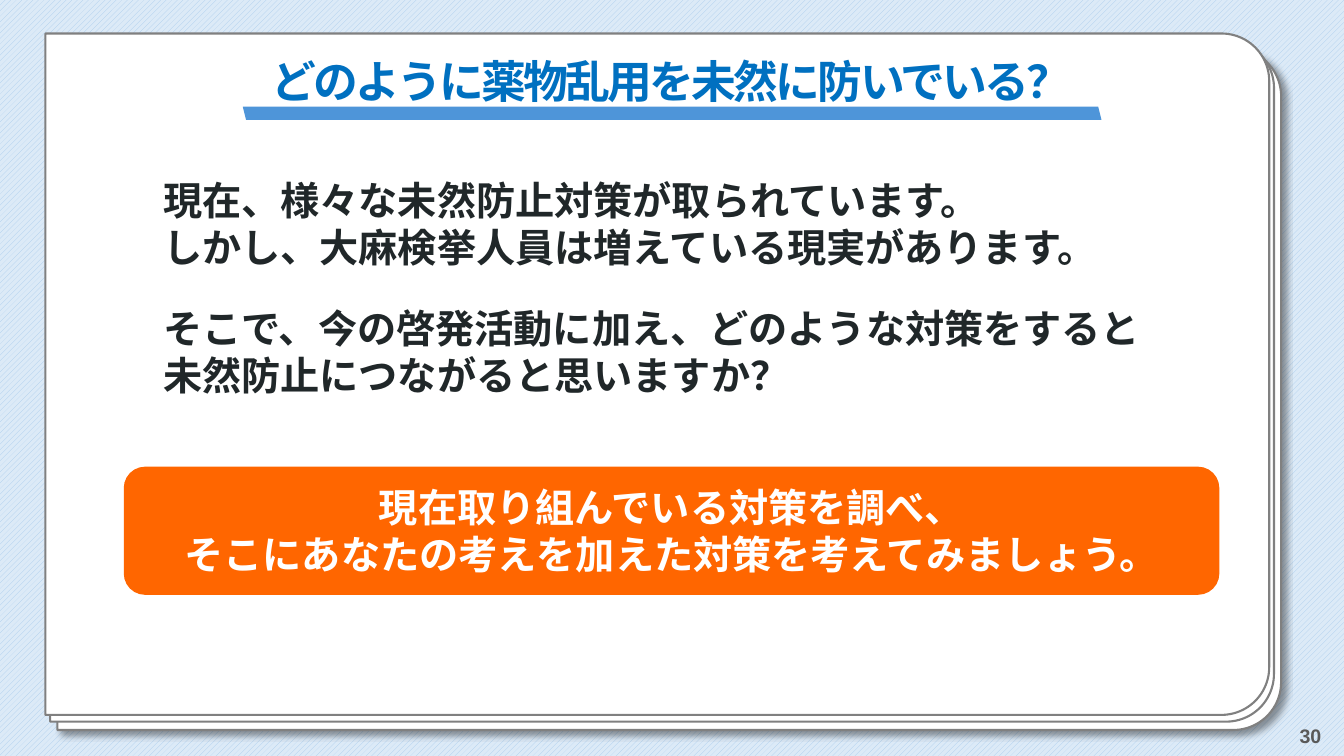
import pptx
import pptx.util
import pptx.dml.color
import pptx.enum.dml
import pptx.enum.shapes
import pptx.enum.text
import pptx.oxml
import pptx.oxml.ns

TITLE = "どのように薬物乱用を未然に防いでいる？"
BODY = [
    "現在、様々な未然防止対策が取られています。\vしかし、大麻検挙人員は増えている現実があります。",
    "そこで、今の啓発活動に加え、どのような対策をすると\v未然防止につながると思いますか？",
]
CALL = ["現在取り組んでいる対策を調べ、\vそこにあなたの考えを加えた対策を考えてみましょう。"]
PAGE = "30"
SHEETS = [(8.28, -5.61), (8.1, -5.82), (7.98, -5.99)]
COLORS = {
    "stripe": "A6CAEC", "ground": "DCEAF7", "white": "FFFFFF", "edge": "808080",
    "title": "0070C0", "page": "595959", "text": "202729", "call": "FF6600", "bar": "4E95D9",
}
SHADOW = (
    '<a:effectLst xmlns:a="http://schemas.openxmlformats.org/drawingml/2006/main">'
    '<a:outerShdw blurRad="50800" dist="63500" dir="2700000" algn="tl" rotWithShape="0">'
    '<a:srgbClr val="000000"><a:alpha val="40000"/></a:srgbClr></a:outerShdw></a:effectLst>'
)

Cm = pptx.util.Cm
Pt = pptx.util.Pt
SHAPE = pptx.enum.shapes.MSO_SHAPE
ALIGN = pptx.enum.text.PP_ALIGN
ANCHOR = pptx.enum.text.MSO_ANCHOR


def rgb(name):
    return pptx.dml.color.RGBColor.from_string(COLORS[name])


def add_shape(kind, box, fill):
    sp = slide.shapes.add_shape(kind, *map(Cm, box))
    sp.shadow.inherit = False
    sp.fill.solid()
    sp.fill.fore_color.rgb = rgb(fill)
    sp.line.fill.background()
    return sp


def write(sp, lines, size, color, align, anchor, font="Arial", after=0):
    tf = sp.text_frame
    tf.word_wrap = True
    tf.vertical_anchor = anchor
    for i, line in enumerate(lines):
        p = tf.paragraphs[0] if i == 0 else tf.add_paragraph()
        p.text = line
        p.alignment = align
        p.space_after = Pt(after)
        for r in p.runs:
            r.font.name = font
            r.font.size = Pt(size)
            r.font.bold = True
            r.font.color.rgb = rgb(color)
            ea = r.font._element.makeelement(pptx.oxml.ns.qn("a:ea"), {"typeface": font})
            r.font._element.append(ea)
    return tf


prs = pptx.Presentation()
prs.slide_width, prs.slide_height = Cm(33.87), Cm(19.05)
slide = prs.slides.add_slide(prs.slide_layouts[5])

ground = slide.background.fill
ground.patterned()
ground.pattern = pptx.enum.dml.MSO_PATTERN.WIDE_UPWARD_DIAGONAL
ground.fore_color.rgb = rgb("stripe")
ground.back_color.rgb = rgb("ground")

for i, (left, top) in enumerate(SHEETS):
    sheet = add_shape(SHAPE.ROUND_2_SAME_RECTANGLE, (left, top, 17.17, 30.84), "white")
    sheet.rotation = 90
    sheet.adjustments[0] = 0.07
    sheet.adjustments[1] = 0
    sheet.line.color.rgb = rgb("edge")
    sheet.line.width = Pt(1.5)
    if i == 0:
        props = sheet._element.spPr
        props.remove(props.find(pptx.oxml.ns.qn("a:effectLst")))
        props.append(pptx.oxml.parse_xml(SHADOW))

title = slide.shapes.title
title.left, title.top, title.width, title.height = map(Cm, (3.12, 0.64, 27.61, 2.39))
slide.shapes._spTree.append(title._element)
tf = write(title, [TITLE], 32, "title", ALIGN.CENTER, ANCHOR.BOTTOM, "Noto Sans CJK JP")
tf.auto_size = pptx.enum.text.MSO_AUTO_SIZE.NONE
tf.margin_top, tf.margin_bottom = 0, Cm(0.3)
tf.paragraphs[0].line_spacing = 0.9
tf.paragraphs[0].runs[0].font._element.set("spc", "-200")

page = slide.shapes.add_textbox(*map(Cm, (25.93, 18.03, 7.62, 1.02)))
write(page, [PAGE], 14, "page", ALIGN.RIGHT, ANCHOR.MIDDLE)

body = add_shape(SHAPE.RECTANGLE, (3.86, 4.19, 26.16, 7.01), "white")
call = add_shape(SHAPE.ROUNDED_RECTANGLE, (3.12, 11.76, 27.61, 3.23), "call")
for sp, lines, color, align, anchor, after in [
    (body, BODY, "text", ALIGN.LEFT, ANCHOR.TOP, 24),
    (call, CALL, "white", ALIGN.CENTER, ANCHOR.MIDDLE, 0),
]:
    tf = write(sp, lines, 28, color, align, anchor, after=after)
    tf.margin_left = tf.margin_right = tf.margin_top = tf.margin_bottom = Cm(0.25)

bar = add_shape(SHAPE.PARALLELOGRAM, (6.12, 2.69, 21.64, 0.33), "bar")
bar._element.spPr.xfrm.set("flipH", "1")

prs.save("out.pptx")
